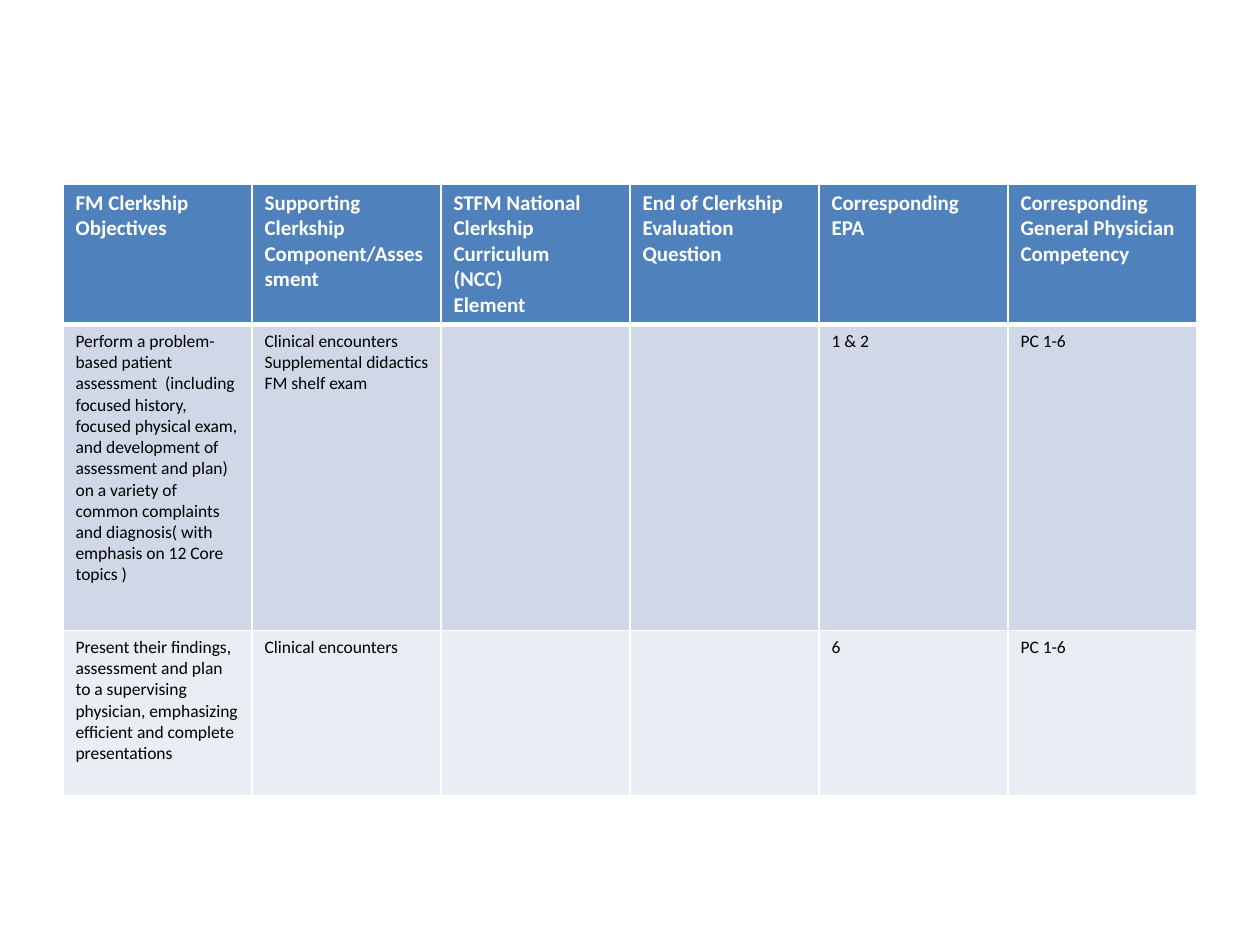
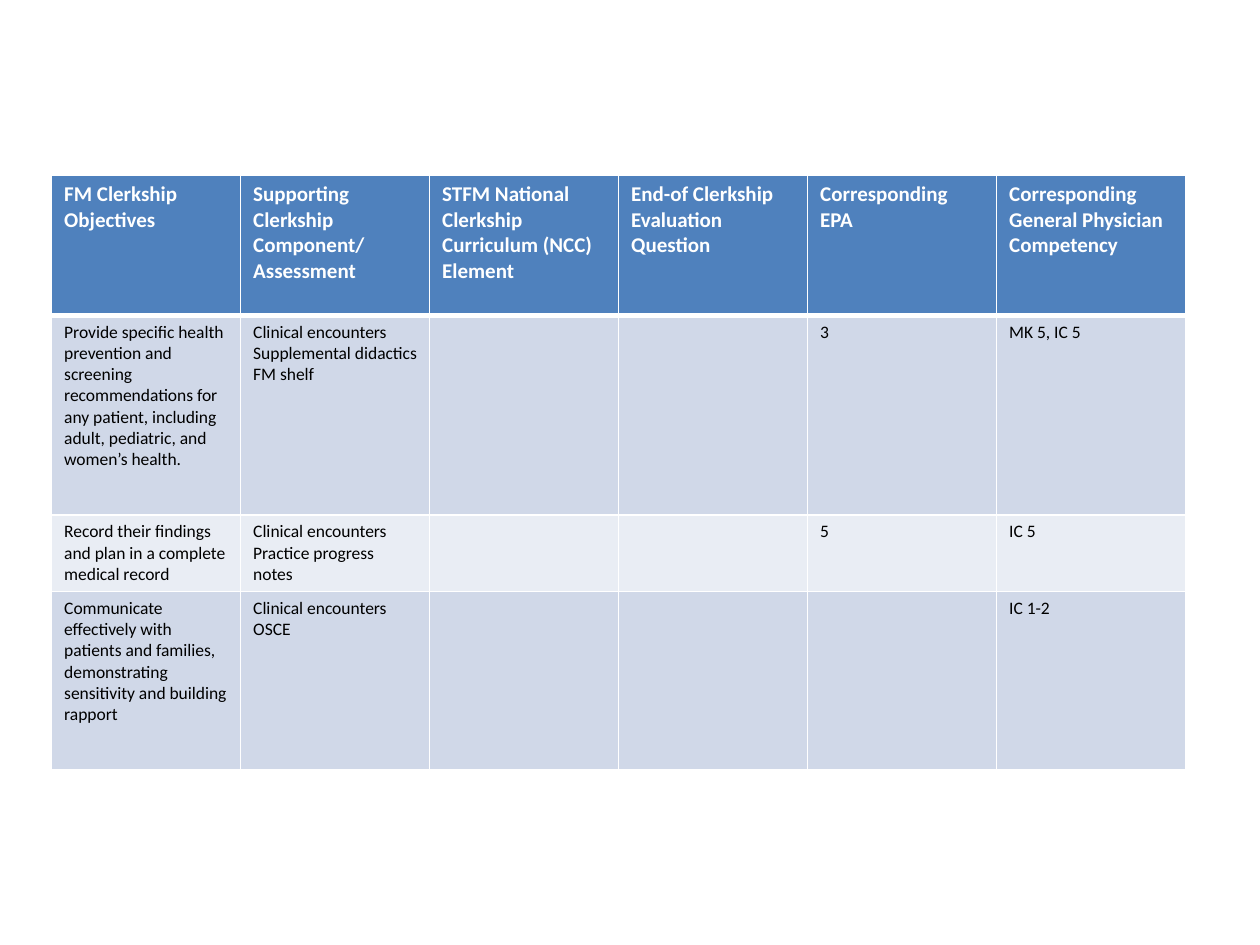
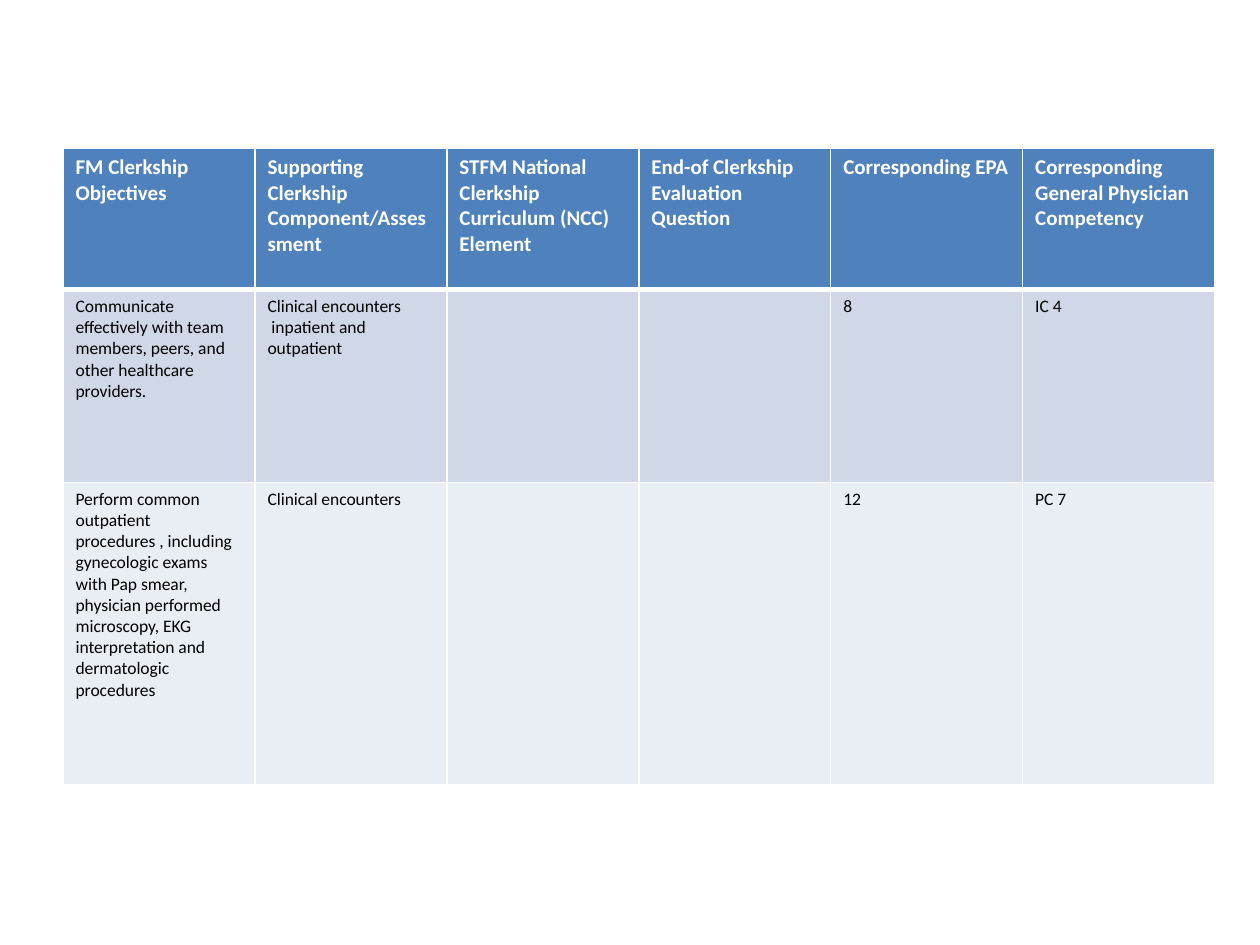
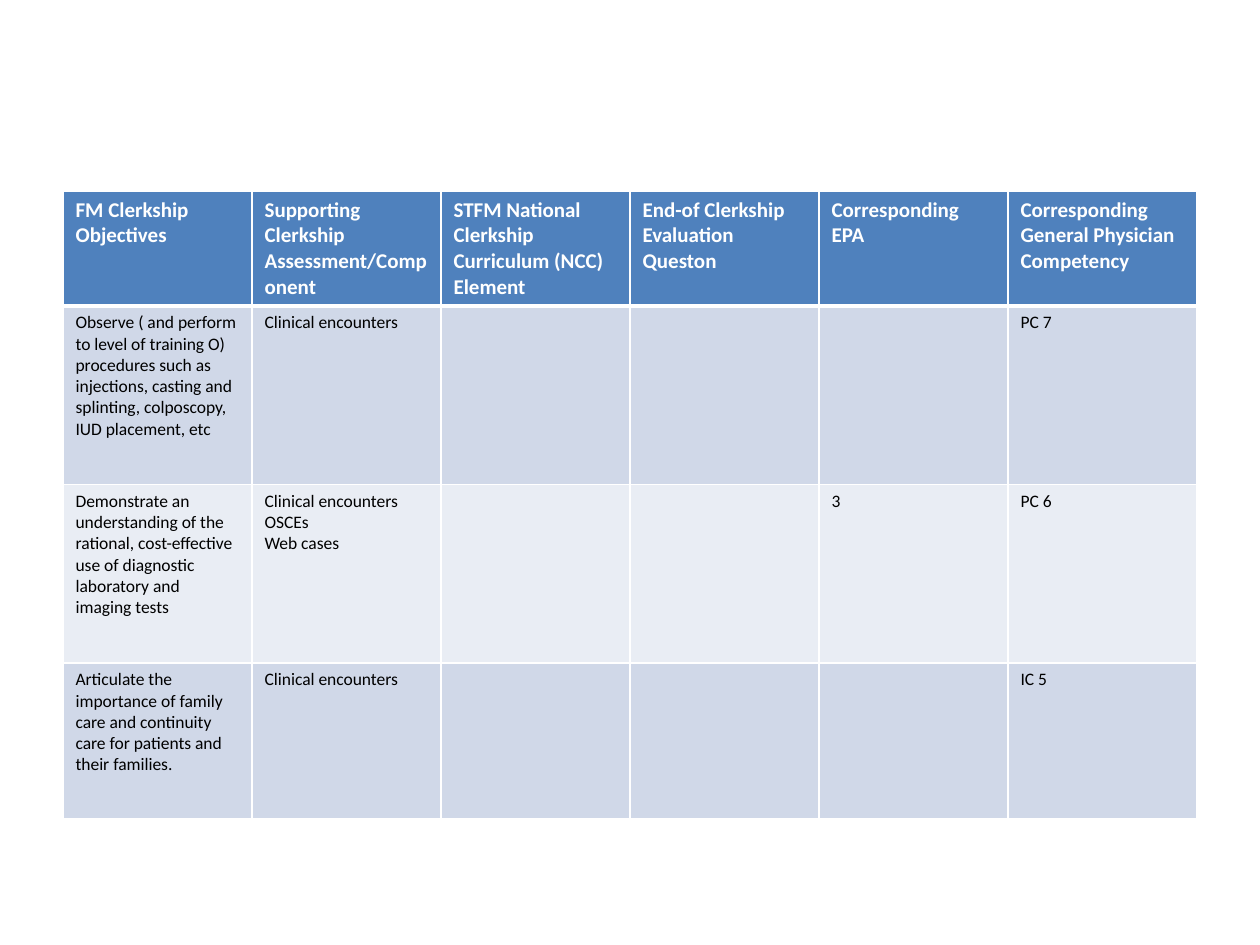
from dataclasses import dataclass
from lxml.etree import SubElement as Sub
from pptx import Presentation
from pptx.dml.color import RGBColor as Rgb
from pptx.oxml.ns import qn
from pptx.util import Pt


@dataclass(frozen=True)
class Theme:
    font: str = "Calibri"
    head: str = "4F81BD"
    bands: tuple = ("D0D8E8", "E9EDF4")
    white: str = "FFFFFF"
    black: str = "000000"
    head_size: int = 12
    body_size: int = 10
    thin: int = 1
    thick: int = 3


theme = Theme()


def edge(cell, side, width):
    """Draw one cell border; sides go in the order L, R, T, B, before the fill."""
    line = Sub(cell._tc.get_or_add_tcPr(), qn(f"a:ln{side}"), w=str(Pt(width)))
    Sub(Sub(line, qn("a:solidFill")), qn("a:srgbClr"), val=theme.white)


def style(cell, row):
    """Give a cell its borders, fill and type by its row, where row 0 is the header."""
    head = row == 0
    edge(cell, "L", theme.thin)
    edge(cell, "R", theme.thin)
    edge(cell, "T", theme.thick if row == 1 else theme.thin)
    edge(cell, "B", theme.thick if head else theme.thin)
    cell.fill.solid()
    cell.fill.fore_color.rgb = Rgb.from_string(theme.head if head else theme.bands[(row - 1) % 2])
    for para in cell.text_frame.paragraphs:
        for run in para.runs:
            font = run.font
            font.name = theme.font
            font.size = Pt(theme.head_size if head else theme.body_size)
            font.bold = head
            font.color.rgb = Rgb.from_string(theme.white if head else theme.black)


# Header labels that recur from slide to slide
goal = "FM Clerkship Objectives"
support = "Supporting Clerkship Component/Assessment"
national = "STFM National Clerkship Curriculum (NCC)\nElement"
survey = "End-of Clerkship Evaluation Question"
epa = "Corresponding EPA"
skill = "Corresponding General Physician Competency"
visits = "Clinical encounters"

# Each slide: left, top, column width, row heights, header,
# then rows of objective, support, EPA and competency
slides = [
    (36, 105.1, 108, (79.5, 174.8, 94.2),
     (goal, support, "STFM National Clerkship Curriculum\n(NCC)\nElement",
      "End of Clerkship Evaluation Question", epa, skill),
     [("Perform a problem-based patient assessment  (including focused history, "
       "focused physical exam, and development of assessment and plan) on a variety "
       "of common complaints and diagnosis( with emphasis on 12 Core topics )",
       f"{visits}\nSupplemental didactics\nFM shelf exam", "1 & 2", "PC 1-6"),
      ("Present their findings, assessment and plan to a supervising physician, "
       "emphasizing efficient and complete presentations",
       visits, "6", "PC 1-6")]),
    (29.5, 100.3, 108, (79.9, 114.2, 43.4, 101.8),
     (goal, "Supporting Clerkship\nComponent/\nAssessment", national, survey, epa, skill),
     [("Provide specific health prevention and screening recommendations for any "
       "patient, including adult, pediatric, and women’s health.",
       f"{visits}\nSupplemental didactics\nFM shelf", "3", "MK 5, IC 5"),
      ("Record their findings and plan in a complete medical record",
       f"{visits}\nPractice progress notes", "5", "IC 5"),
      ("Communicate effectively with patients and families, demonstrating "
       "sensitivity and building rapport",
       f"{visits}\nOSCE", "", "IC 1-2")]),
    (36, 84.8, 109.7, (80.6, 110.2, 172.8),
     (goal, support, national.replace("\n", " "), survey, epa, skill),
     [("Communicate effectively with team members, peers, and other healthcare\n"
       "providers.",
       f"{visits}\n inpatient and outpatient", "8", "IC 4"),
      ("Perform common outpatient procedures , including gynecologic exams with "
       "Pap smear, physician performed microscopy, EKG interpretation and "
       "dermatologic procedures",
       visits, "12", "PC 7")]),
    (36, 109.2, 108, (65.1, 102, 102, 89.2),
     (goal, "Supporting Clerkship Assessment/Component", national,
      "End-of Clerkship Evaluation Queston", epa, skill),
     [("Observe ( and perform to level of training O) procedures such as "
       "injections, casting and splinting, colposcopy, IUD placement, etc",
       visits, "", "PC 7"),
      ("Demonstrate an understanding of the rational, cost-effective use of "
       "diagnostic laboratory and imaging tests",
       f"{visits}\nOSCEs\nWeb cases", "3", "PC 6"),
      ("Articulate the importance of family care and continuity care for patients "
       "and their families.",
       visits, "", "IC 5")]),
]

deck = Presentation()
deck.slide_width, deck.slide_height = Pt(720), Pt(540)

for left, top, width, heights, header, body in slides:
    slide = deck.slides.add_slide(deck.slide_layouts[6])
    # The national element and evaluation columns stay empty below the header
    rows = [header] + [(aim, aid, "", "", act, code) for aim, aid, act, code in body]
    table = slide.shapes.add_table(
        len(rows), len(header), Pt(left), Pt(top),
        Pt(width * len(header)), Pt(sum(heights))).table
    for col in table.columns:
        col.width = Pt(width)
    for r, texts in enumerate(rows):
        table.rows[r].height = Pt(heights[r])
        for c, text in enumerate(texts):
            cell = table.cell(r, c)
            cell.text_frame.text = text
            style(cell, r)

deck.save("out.pptx")
